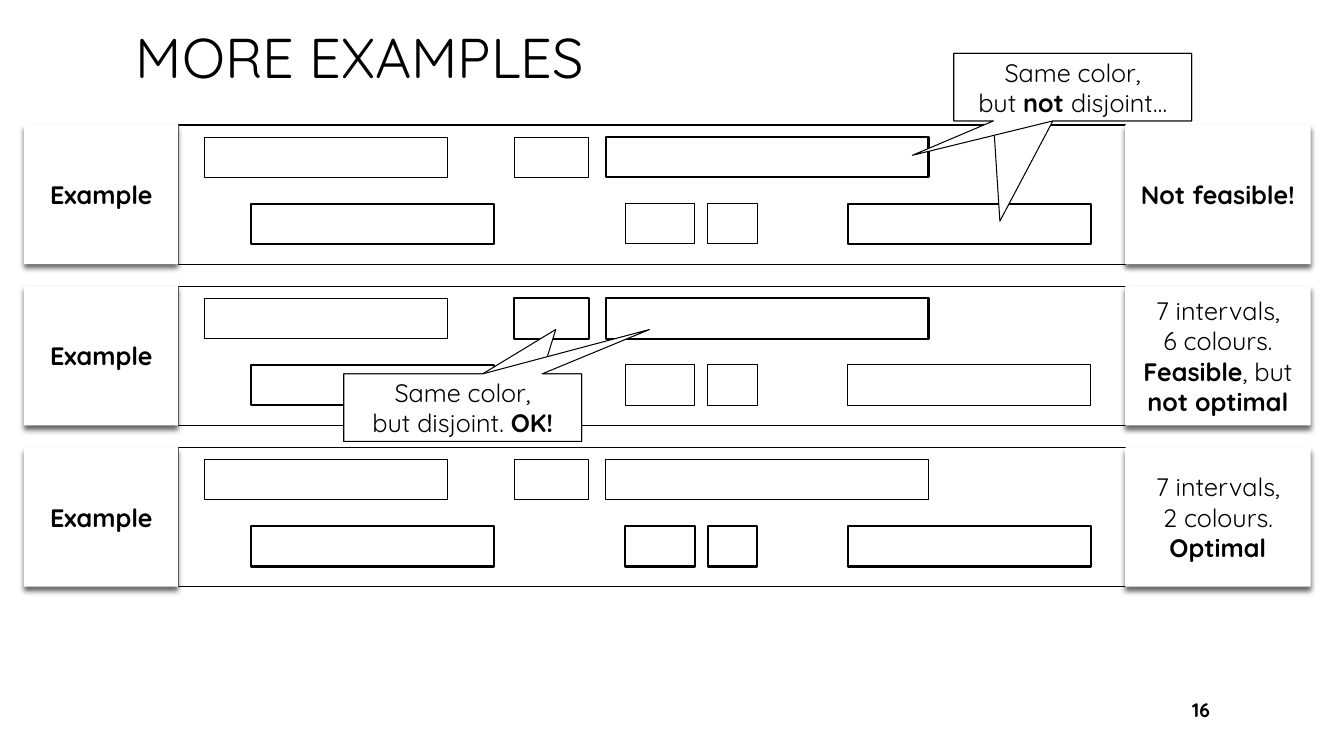
from lxml.etree import SubElement
from pptx import Presentation
from pptx.dml.color import RGBColor
from pptx.enum.shapes import MSO_SHAPE as Shape
from pptx.enum.text import MSO_ANCHOR as Anchor, PP_ALIGN as Align
from pptx.oxml.ns import qn
from pptx.util import Inches, Pt

COLOURS = {"ink": "000000", "paper": "FFFFFF"}
FONT = "Quicksand"
TITLE = "MORE EXAMPLES"
PAGE_NUMBER = "16"

INTERVALS = {
    "a": (2.03, 2.41, 0),
    "b": (2.49, 2.41, 1),
    "c": (5.1, 0.74, 0),
    "d": (6.2, 0.69, 1),
    "e": (7.02, 0.49, 1),
    "f": (6.01, 3.2, 0),
    "g": (8.41, 2.41, 1),
}

EXAMPLES = [
    {"bold_intervals": "bfg", "verdict": [[("Not feasible!", True)]]},
    {"bold_intervals": "bcf", "verdict": [
        [("7 intervals,\n6 colours.", False)],
        [("Feasible", True), (", but\n", False), ("not optimal", True)]]},
    {"bold_intervals": "bdeg", "verdict": [
        [("7 intervals,\n2 colours.", False)], [("Optimal", True)]]},
]

NOT_DISJOINT = [[("Same color,\nbut ", False), ("not ", True), ("disjoint…", False)]]
DISJOINT = [[("Same color,\nbut disjoint. ", False), ("OK!", True)]]
CALLOUTS = [
    (9.46, 0.53, (-0.306, 1.984), []),
    (9.46, 0.53, (-0.674, 1.009), NOT_DISJOINT),
    (3.41, 3.71, (0.391, -1.158), []),
    (3.41, 3.71, (0.785, -1.158), DISJOINT),
]

ROW_TOP, ROW_STEP, ROW_HEIGHT = 1.24, 1.6, 1.38
LABEL_LEFT, TRACK_LEFT, VERDICT_LEFT, VERDICT_WIDTH = 0.24, 1.77, 11.16, 1.84
LANE_INSET, LANE_STEP, INTERVAL_HEIGHT = 0.12, 0.66, 0.4
CALLOUT_SIZE = (2.36, 0.67)
THIN, THICK = 0.75, 1.5


def write(frame, paragraphs, size=18, align=Align.CENTER):
    frame.word_wrap = True
    frame.vertical_anchor = Anchor.MIDDLE
    for index, pieces in enumerate(paragraphs):
        para = frame.paragraphs[0] if index == 0 else frame.add_paragraph()
        para.alignment = align
        para.font.name = FONT
        para.font.size = Pt(size)
        para.font.color.rgb = RGBColor.from_string(COLOURS["ink"])
        for text, bold in pieces:
            for number, line in enumerate(text.split("\n")):
                if number:
                    para.add_line_break()
                if line:
                    span = para.add_run()
                    span.text = line
                    span.font.bold = bold


def add_box(page, kind, left, top, width, height, line=None):
    box = page.shapes.add_shape(
        kind, Inches(left), Inches(top), Inches(width), Inches(height))
    box.shadow.inherit = False
    box.fill.solid()
    box.fill.fore_color.rgb = RGBColor.from_string(COLOURS["paper"])
    if line:
        box.line.color.rgb = RGBColor.from_string(COLOURS["ink"])
        box.line.width = Pt(line)
    else:
        box.line.fill.background()
    return box


def add_card(page, left, top, width, paragraphs):
    card = add_box(page, Shape.RECTANGLE, left, top, width, ROW_HEIGHT)
    effects = card.element.spPr.find(qn("a:effectLst"))
    shadow = SubElement(effects, qn("a:outerShdw"), blurRad=str(Pt(4)),
                        dist=str(Pt(3)), dir="5400000", algn="t", rotWithShape="0")
    tint = SubElement(shadow, qn("a:srgbClr"), val=COLOURS["ink"])
    SubElement(tint, qn("a:alpha"), val="60000")
    write(card.text_frame, paragraphs)


def add_example(page, top, bold_intervals, verdict):
    add_box(page, Shape.RECTANGLE, TRACK_LEFT, top,
            VERDICT_LEFT - TRACK_LEFT, ROW_HEIGHT, THIN)
    for name, (left, width, lane) in INTERVALS.items():
        add_box(page, Shape.FLOWCHART_PROCESS, left,
                top + LANE_INSET + lane * LANE_STEP, width, INTERVAL_HEIGHT,
                THICK if name in bold_intervals else THIN)
    add_card(page, LABEL_LEFT, top, TRACK_LEFT - LABEL_LEFT, [[("Example", True)]])
    add_card(page, VERDICT_LEFT, top, VERDICT_WIDTH, verdict)


def add_label(page, left, top, width, height, text, size, bold, align):
    label = page.shapes.add_textbox(
        Inches(left), Inches(top), Inches(width), Inches(height))
    write(label.text_frame, [[(text, bold)]], size, align)


def main():
    """Build the slide of interval colouring examples."""
    deck = Presentation()
    deck.slide_width, deck.slide_height = Inches(13.33), Inches(7.5)
    page = deck.slides.add_slide(deck.slide_layouts[6])
    add_label(page, 1.25, 0, 10.83, 1.12, TITLE, 40, False, Align.LEFT)
    for row, example in enumerate(EXAMPLES):
        add_example(page, ROW_TOP + row * ROW_STEP, **example)
    for left, top, pointer, paragraphs in CALLOUTS:
        callout = add_box(page, Shape.RECTANGULAR_CALLOUT, left, top, *CALLOUT_SIZE, THIN)
        for index, value in enumerate(pointer):
            callout.adjustments[index] = value
        write(callout.text_frame, paragraphs)
    add_label(page, 11.5, 6.84, 0.6, 0.4, PAGE_NUMBER, 14, True, Align.RIGHT)
    deck.save("out.pptx")


if __name__ == "__main__":
    main()
